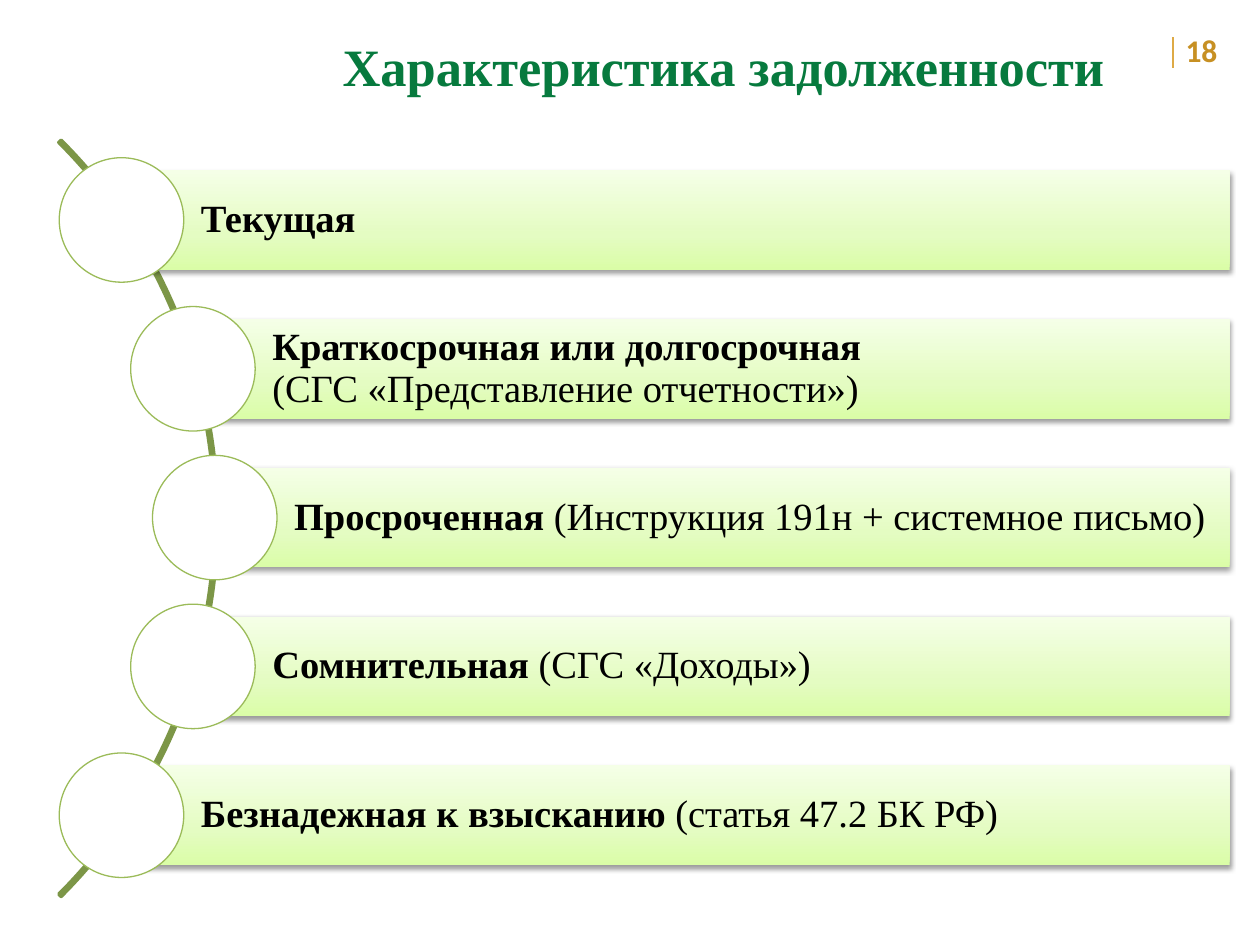
from copy import deepcopy
from dataclasses import dataclass

from pptx import Presentation
from pptx import util as u
from pptx.dml.color import RGBColor
from pptx.enum import shapes, text
from pptx.oxml import parse_xml
from pptx.oxml.ns import nsdecls, qn


@dataclass(frozen=True)
class Theme:
    title: str = "077A3E"
    number: str = "C79023"
    rule: str = "DEAA46"
    arc: str = "7C9647"
    ring: str = "9BBB59"
    white: str = "FFFFFF"
    black: str = "000000"
    gradient: tuple = ((0, "DAFDA7"), (0.35, "E4FCC2"), (1, "F5FFE7"))
    serif: str = "Times New Roman"
    sans: str = "Calibri"
    title_size: int = 30
    bar_size: int = 22
    number_size: int = 18


class SlideBuilder:
    def __init__(self, slide, theme):
        self.slide = slide
        self.theme = theme

    def shape(self, kind, left, top, width, height):
        shape = self.slide.shapes.add_shape(
            kind, u.Cm(left), u.Cm(top), u.Cm(width), u.Cm(height))
        shape.shadow.inherit = False
        return shape

    def outline(self, shape, color, width):
        shape.line.color.rgb = RGBColor.from_string(color)
        shape.line.width = u.Pt(width)

    def run(self, paragraph, words, size, color, font, bold=True):
        run = paragraph.add_run()
        run.text = words
        run.font.size = u.Pt(size)
        run.font.name = font
        run.font.bold = bold
        run.font.color.rgb = RGBColor.from_string(color)

    def label(self, left, top, width, height, words, size, color, font,
              alignment=text.PP_ALIGN.LEFT):
        box = self.slide.shapes.add_textbox(
            u.Cm(left), u.Cm(top), u.Cm(width), u.Cm(height))
        box.text_frame.word_wrap = True
        paragraph = box.text_frame.paragraphs[0]
        paragraph.alignment = alignment
        self.run(paragraph, words, size, color, font)

    def vertical_rule(self, x, top, bottom):
        rule = self.slide.shapes.add_connector(
            shapes.MSO_CONNECTOR.STRAIGHT, u.Cm(x), u.Cm(top), u.Cm(x), u.Cm(bottom))
        self.outline(rule, self.theme.rule, 1)
        rule._element.spPr.append(parse_xml(f"<a:effectLst {nsdecls('a')}/>"))

    def arc(self, left, top, diameter):
        arc = self.shape(shapes.MSO_SHAPE.BLOCK_ARC, left, top, diameter, diameter)
        for index, value in enumerate((189, 27, 0.003)):
            arc.adjustments[index] = value
        arc.fill.background()
        self.outline(arc, self.theme.arc, 2)

    def circle(self, center_x, center_y, diameter):
        circle = self.shape(shapes.MSO_SHAPE.OVAL, center_x - diameter / 2,
                            center_y - diameter / 2, diameter, diameter)
        circle.fill.solid()
        circle.fill.fore_color.rgb = RGBColor.from_string(self.theme.white)
        self.outline(circle, self.theme.ring, 0.75)

    def bar(self, left, top, width, height, lines):
        bar = self.shape(shapes.MSO_SHAPE.RECTANGLE, left, top, width, height)
        bar.line.fill.background()
        self.paint_gradient(bar)
        self.drop_shadow(bar)
        frame = bar.text_frame
        frame.word_wrap = True
        frame.vertical_anchor = text.MSO_ANCHOR.MIDDLE
        frame.margin_left = u.Cm(1.6)
        frame.margin_right = frame.margin_top = frame.margin_bottom = u.Cm(0.15)
        for index, runs in enumerate(lines):
            paragraph = frame.add_paragraph() if index else frame.paragraphs[0]
            paragraph.alignment = text.PP_ALIGN.LEFT
            paragraph.line_spacing = 0.9
            for words, bold in runs:
                self.run(paragraph, words, self.theme.bar_size,
                         self.theme.black, self.theme.serif, bold)

    def paint_gradient(self, shape):
        shape.fill.gradient()
        shape.fill.gradient_angle = 90
        stop_list = shape._element.spPr.find(".//" + qn("a:gsLst"))
        stop_list.insert(1, deepcopy(stop_list[0]))
        for stop, (position, color) in zip(shape.fill.gradient_stops, self.theme.gradient):
            stop.position = position
            stop.color.rgb = RGBColor.from_string(color)

    def drop_shadow(self, shape):
        shape._element.spPr.find(qn("a:effectLst")).append(parse_xml(
            f'<a:outerShdw {nsdecls("a")} blurRad="{u.Pt(3.1)}" dist="{u.Pt(1.6)}" '
            f'dir="5400000" rotWithShape="0"><a:srgbClr val="{self.theme.black}">'
            '<a:alpha val="38000"/></a:srgbClr></a:outerShdw>'))


def main():
    presentation = Presentation()
    presentation.slide_width = u.Cm(25.4)
    presentation.slide_height = u.Cm(19.05)
    slide = presentation.slides.add_slide(presentation.slide_layouts[6])
    theme = Theme()
    builder = SlideBuilder(slide, theme)

    builder.vertical_rule(23.65, 0.75, 1.37)
    builder.label(23.65, 0.5, 1.37, 1.02, "18",
                  theme.number_size, theme.number, theme.sans)
    builder.label(6.22, 0.56, 16.74, 1.52, "Характеристика задолженности",
                  theme.title_size, theme.title, theme.serif, text.PP_ALIGN.CENTER)
    builder.arc(-17.17, -0.33, 21.56)

    debts = (
        (2.45, [[("Текущая", True)]]),
        (3.89, [[("Краткосрочная или долгосрочная", True)],
                [("(СГС «Представление отчетности»)", False)]]),
        (4.33, [[("Просроченная ", True),
                 ("(Инструкция 191н + системное письмо)", False)]]),
        (3.89, [[("Сомнительная ", True), ("(СГС «Доходы»)", False)]]),
        (2.45, [[("Безнадежная к взысканию ", True),
                 ("(статья 47.2 БК РФ)", False)]]),
    )
    first_top, pitch, height, right, diameter = 3.43, 3.0, 2.01, 24.79, 2.51
    for index, (left, lines) in enumerate(debts):
        top = first_top + index * pitch
        builder.bar(left, top, right - left, height, lines)
        builder.circle(left, top + height / 2, diameter)

    presentation.save("out.pptx")


if __name__ == "__main__":
    main()
